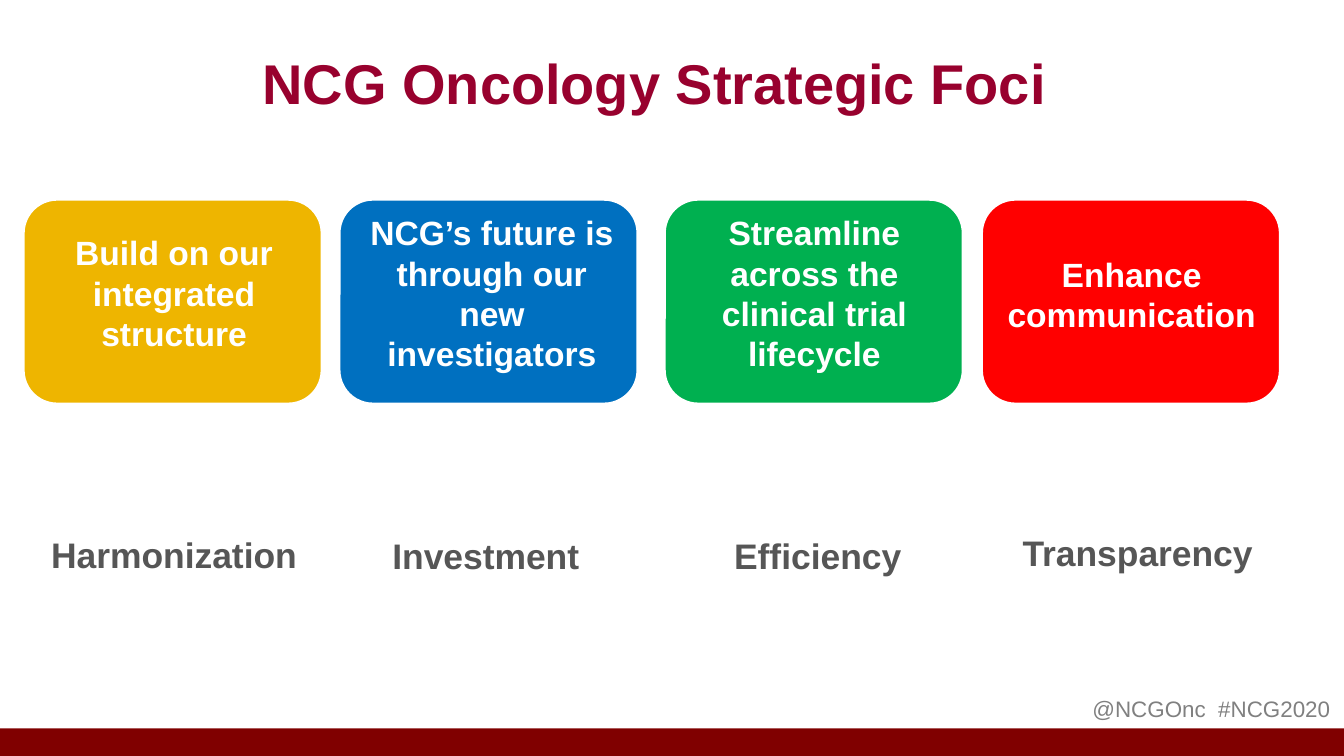
"""Build a slide with four strategic foci cards and their captions."""
from dataclasses import dataclass

from pptx import Presentation
from pptx.dml.color import RGBColor
from pptx.enum.shapes import MSO_SHAPE
from pptx.enum.text import MSO_ANCHOR, PP_ALIGN
from pptx.util import Inches, Pt

RECT, ROUND = MSO_SHAPE.RECTANGLE, MSO_SHAPE.ROUNDED_RECTANGLE
LEFT, CENTER = PP_ALIGN.LEFT, PP_ALIGN.CENTER
TOP = MSO_ANCHOR.TOP
WIDTH = 10
HEIGHT = WIDTH * 9 / 16


@dataclass
class Box:
    left: float
    top: float
    width: float
    height: float

    def dims(self) -> list:
        return [Inches(v) for v in (self.left, self.top, self.width, self.height)]


@dataclass
class Focus:
    left: float
    fill: str
    goal: str
    goal_box: Box
    theme: str
    theme_box: Box


FOCI = [
    Focus(0.17, "EEB500", "Build on our integrated structure",
          Box(0.22, 1.68, 2.15, 1.01), "Harmonization", Box(0.18, 3.85, 2.23, 0.62)),
    Focus(2.52, "0070C0", "NCG’s future is through our new investigators",
          Box(2.6, 1.53, 2.12, 1.31), "Investment", Box(2.5, 3.86, 2.23, 0.6)),
    Focus(4.94, "00B050", "Streamline across the clinical trial lifecycle",
          Box(4.96, 1.53, 2.2, 1.31), "Efficiency", Box(4.97, 3.86, 2.23, 0.6)),
    Focus(7.3, "FF0000", "Enhance communication",
          Box(7.33, 1.84, 2.18, 0.71), "Transparency", Box(7.35, 3.84, 2.23, 0.64)),
]


def rgb(code: str) -> RGBColor:
    return RGBColor.from_string(code)


def add_panel(slide, kind, box: Box, fill: str, edge: str = "") -> None:
    shape = slide.shapes.add_shape(kind, *box.dims())
    shape.shadow.inherit = False
    shape.fill.solid()
    shape.fill.fore_color.rgb = rgb(fill)
    if edge:
        shape.line.color.rgb = rgb(edge)
        shape.line.width = Pt(2)
    else:
        shape.line.fill.background()


def write(shape, text: str, size: float, color: str, bold: bool = True,
          align=CENTER, space: float = 1.0, wrap: bool = True) -> None:
    frame = shape.text_frame
    frame.word_wrap = wrap
    frame.vertical_anchor = TOP
    para = frame.paragraphs[0]
    para.alignment = align
    para.line_spacing = space
    para.space_before = Pt(0)
    run = para.add_run()
    run.text = text
    run.font.name = "Arial"
    run.font.size = Pt(size)
    run.font.bold = bold
    run.font.color.rgb = rgb(color)


def add_title(slide, text: str, box: Box) -> None:
    title = slide.shapes.title
    title.left, title.top, title.width, title.height = box.dims()
    title.text_frame.margin_top = Inches(0.05)
    write(title, text, 30, "98012E")


def add_focus(slide, focus: Focus) -> None:
    add_panel(slide, ROUND, Box(focus.left, 1.48, 2.23, 1.53), focus.fill, "FFFFFF")
    goal = slide.shapes.add_textbox(*focus.goal_box.dims())
    write(goal, focus.goal, 18, "FFFFFF")
    theme = slide.shapes.add_textbox(*focus.theme_box.dims())
    frame = theme.text_frame
    frame.margin_left = frame.margin_top = frame.margin_right = Inches(0.15)
    frame.margin_bottom = 0
    write(theme, focus.theme, 19, "565656", space=0.9)


def main() -> None:
    deck = Presentation()
    deck.slide_width, deck.slide_height = Inches(WIDTH), Inches(HEIGHT)
    slide = deck.slides.add_slide(deck.slide_layouts[5])
    add_panel(slide, RECT, Box(0, 5.42, WIDTH, 0.21), "800000")
    add_title(slide, "NCG Oncology Strategic Foci", Box(1.33, 0.31, 7.08, 0.56))
    for focus in FOCI:
        add_focus(slide, focus)
    tag = slide.shapes.add_textbox(*Box(8.03, 5.12, 1.97, 0.3).dims())
    write(tag, "@NCGOnc  #NCG2020", 12, "808080", bold=False, align=LEFT, wrap=False)
    deck.save("out.pptx")


if __name__ == "__main__":
    main()
